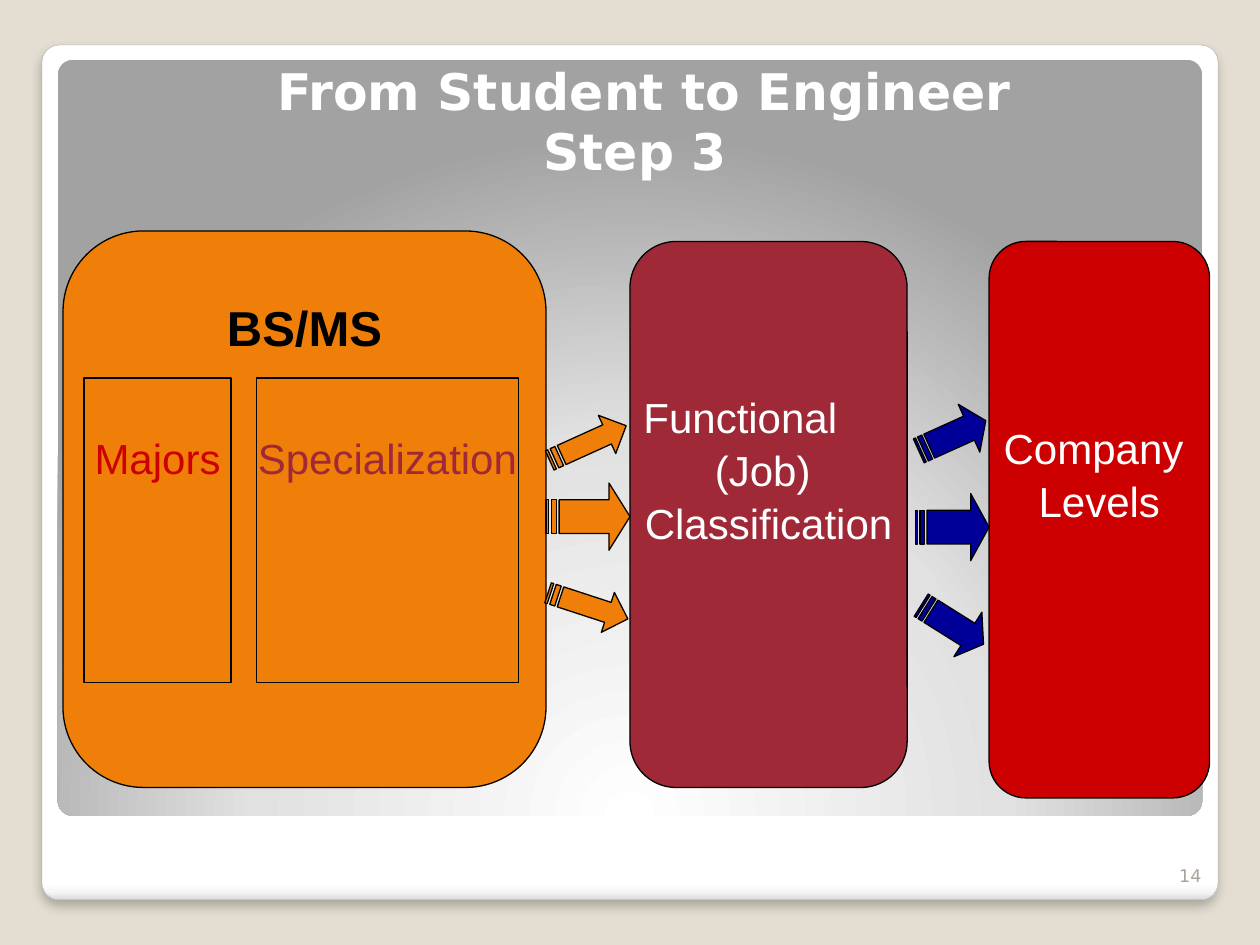
import pptx
import pptx.util
import pptx.dml.color
import pptx.enum.shapes
import pptx.enum.text
import pptx.oxml
import pptx.oxml.ns

RGB = pptx.dml.color.RGBColor
Pt = pptx.util.Pt
SHAPE = pptx.enum.shapes.MSO_SHAPE
ALIGN = pptx.enum.text.PP_ALIGN
ANCHOR = pptx.enum.text.MSO_ANCHOR

SAND = RGB(0xE3, 0xDE, 0xD1)
EDGE_GREY = RGB(0xA4, 0xA4, 0xA4)
NUMBER_GREY = RGB(0xA8, 0xA4, 0x9B)
ORANGE = RGB(0xF0, 0x7F, 0x09)
MAROON = RGB(0x9F, 0x29, 0x36)
RED = RGB(0xCC, 0x00, 0x00)
NAVY = RGB(0x00, 0x00, 0x99)
BLACK = RGB(0x00, 0x00, 0x00)
WHITE = RGB(0xFF, 0xFF, 0xFF)

CARD_STOPS = [(0, WHITE), (98, WHITE), (99, RGB(0xF7, 0xF7, 0xF7)), (100, RGB(0xDA, 0xDA, 0xDA))]
PANEL_STOPS = [(0, WHITE), (55, RGB(0xE1, 0xE1, 0xE1)), (100, RGB(0xA2, 0xA2, 0xA2))]
DOWNWARD = '<a:lin ang="5400000" scaled="0"/>'
FROM_BELOW = ('<a:path path="circle"><a:fillToRect l="50000" t="175000" '
              'r="50000" b="-75000"/></a:path>')
CARD_SHADOW = ('<a:outerShdw blurRad="76200" dist="50800" dir="5400000" algn="tl" rotWithShape="0">'
               '<a:srgbClr val="000000"><a:alpha val="25000"/></a:srgbClr></a:outerShdw>')


def grid(units):
    """Length of a number of grid units: 120 columns by 90 rows fill the slide."""
    return pptx.util.Inches(units / 12)


def place(part, box):
    part.left, part.top, part.width, part.height = map(grid, box)


def style(part, fill, line=BLACK):
    part.shadow.inherit = False
    part.fill.solid()
    part.fill.fore_color.rgb = fill
    part.line.color.rgb = line
    part.line.width = Pt(0.75)


def write(frame, lines, size, color, font="Arial", bold=False, align=ALIGN.CENTER):
    frame.text = "\n".join(lines)
    for paragraph in frame.paragraphs:
        paragraph.alignment = align
        for run in paragraph.runs:
            run.font.name = font
            run.font.size = Pt(size)
            run.font.bold = bold
            run.font.color.rgb = color


def backdrop(slide, box, stops, direction):
    """Slightly rounded sheet with a gradient, placed behind the title."""
    sheet = slide.shapes.add_shape(SHAPE.ROUNDED_RECTANGLE, *map(grid, box))
    sheet.adjustments[0] = 0.02
    sheet.shadow.inherit = False
    sheet.line.fill.background()
    stop_xml = "".join(
        f'<a:gs pos="{share * 1000}"><a:srgbClr val="{color}"/></a:gs>' for share, color in stops)
    gradient = pptx.oxml.parse_xml(
        f'<a:gradFill {pptx.oxml.ns.nsdecls("a")} rotWithShape="1">'
        f'<a:gsLst>{stop_xml}</a:gsLst>{direction}</a:gradFill>')
    sheet.element.spPr.find(pptx.oxml.ns.qn("a:prstGeom")).addnext(gradient)
    slide.shapes.title.element.addprevious(sheet.element)
    return sheet


def card(slide, box):
    sheet = backdrop(slide, box, CARD_STOPS, DOWNWARD)
    sheet.line.color.rgb = EDGE_GREY
    sheet.line.width = Pt(0.16)
    effects = sheet.element.spPr.find(pptx.oxml.ns.qn("a:effectLst"))
    effects.append(pptx.oxml.parse_xml(
        CARD_SHADOW.replace("<a:outerShdw", f'<a:outerShdw {pptx.oxml.ns.nsdecls("a")}', 1)))


def heading(slide, box):
    title = slide.shapes.title
    place(title, box)
    frame = title.text_frame
    write(frame, [" From Student to Engineer\vStep 3"], 28.8, WHITE, "DejaVu Sans", True)
    frame.auto_size = pptx.enum.text.MSO_AUTO_SIZE.NONE
    frame.vertical_anchor = ANCHOR.BOTTOM


def page_number(slide, box):
    frame = slide.shapes.add_textbox(*map(grid, box)).text_frame
    frame.word_wrap = True
    frame.vertical_anchor = ANCHOR.BOTTOM
    write(frame, ["14"], 10, NUMBER_GREY, "DejaVu Sans", align=ALIGN.RIGHT)


def stage(slide, box, outline, fill, lines, text_drop, color, size=24, bold=False):
    """Filled block whose text starts text_drop rows below its top."""
    block = slide.shapes.add_shape(outline, *map(grid, box))
    style(block, fill)
    frame = block.text_frame
    frame.word_wrap = False
    frame.vertical_anchor = ANCHOR.TOP
    frame.margin_left = frame.margin_right = frame.margin_bottom = 0
    frame.margin_top = grid(text_drop)
    write(frame, lines, size, color, bold=bold)
    if len(lines) > 1:
        for paragraph in frame.paragraphs:
            paragraph.line_spacing = 1.05
    return frame


def striped_arrow(slide, box, turn, fill):
    """Right arrow with two stripes at its tail; its outline is in shares of the box."""
    left, top, width, height = box

    def points(shares):
        return [(grid(left + x * width), grid(top + y * height)) for x, y in shares]

    head = points([(0.75, 0), (0.75, 0.25), (5 / 32, 0.25), (5 / 32, 0.75),
                   (0.75, 0.75), (0.75, 1), (1, 0.5)])
    stripes = [points([(start, 0.25), (start, 0.75), (end, 0.75), (end, 0.25)])
               for start, end in [(1 / 16, 1 / 8), (0, 1 / 32)]]
    builder = slide.shapes.build_freeform(*head[0])
    builder.add_line_segments(head[1:], close=True)
    for stripe in stripes:
        builder.move_to(*stripe[0])
        builder.add_line_segments(stripe[1:], close=True)
    arrow = builder.convert_to_shape()
    style(arrow, fill)
    arrow.rotation = turn


def arrow_fan(slide, left, width, fill, arrows):
    for top, height, turn in arrows:
        striped_arrow(slide, (left, top, width, height), turn, fill)


def degree_stage(slide, box):
    left, top, _, _ = box
    stage(slide, box, SHAPE.FLOWCHART_ALTERNATE_PROCESS, ORANGE, ["BS/MS"], 4.1, BLACK, 28, True)
    for column, width, label, color in [(2, 14, "Majors", RED), (18.4, 25, "Specialization", MAROON)]:
        stage(slide, (left + column, top + 14, width, 29), SHAPE.FLOWCHART_PROCESS,
              ORANGE, [label], 5.2, color)


def job_stage(slide, box):
    frame = stage(slide, box, SHAPE.FLOWCHART_ALTERNATE_PROCESS, MAROON,
                  ["Functional", "(Job) ", "Classification"], 12.8, WHITE)
    frame.paragraphs[0].alignment = ALIGN.LEFT


def main():
    deck = pptx.Presentation()
    deck.slide_width, deck.slide_height = grid(120), grid(90)
    slide = deck.slides.add_slide(deck.slide_layouts[5])
    slide.background.fill.solid()
    slide.background.fill.fore_color.rgb = SAND

    card(slide, (4, 4.3, 112, 81.4))
    backdrop(slide, (5.5, 5.7, 109, 72), PANEL_STOPS, FROM_BELOW)
    heading(slide, (6, 10.8, 109, 7))
    page_number(slide, (109.6, 80.2, 6, 4.8))

    degree_stage(slide, (6, 22, 46, 53))
    job_stage(slide, (60, 23, 26.4, 52))
    stage(slide, (94.2, 23, 21, 53), SHAPE.FLOWCHART_ALTERNATE_PROCESS, RED,
          ["Company ", "Levels"], 16, WHITE)
    arrow_fan(slide, 52, 8, ORANGE, [(40.2, 4, 335.6), (46, 6.4, 0), (55.7, 4, 18.1)])
    arrow_fan(slide, 87.2, 7, NAVY, [(39, 5, 335.7), (47, 6.4, 0), (57, 5, 32.1)])
    deck.save("out.pptx")


if __name__ == "__main__":
    main()
